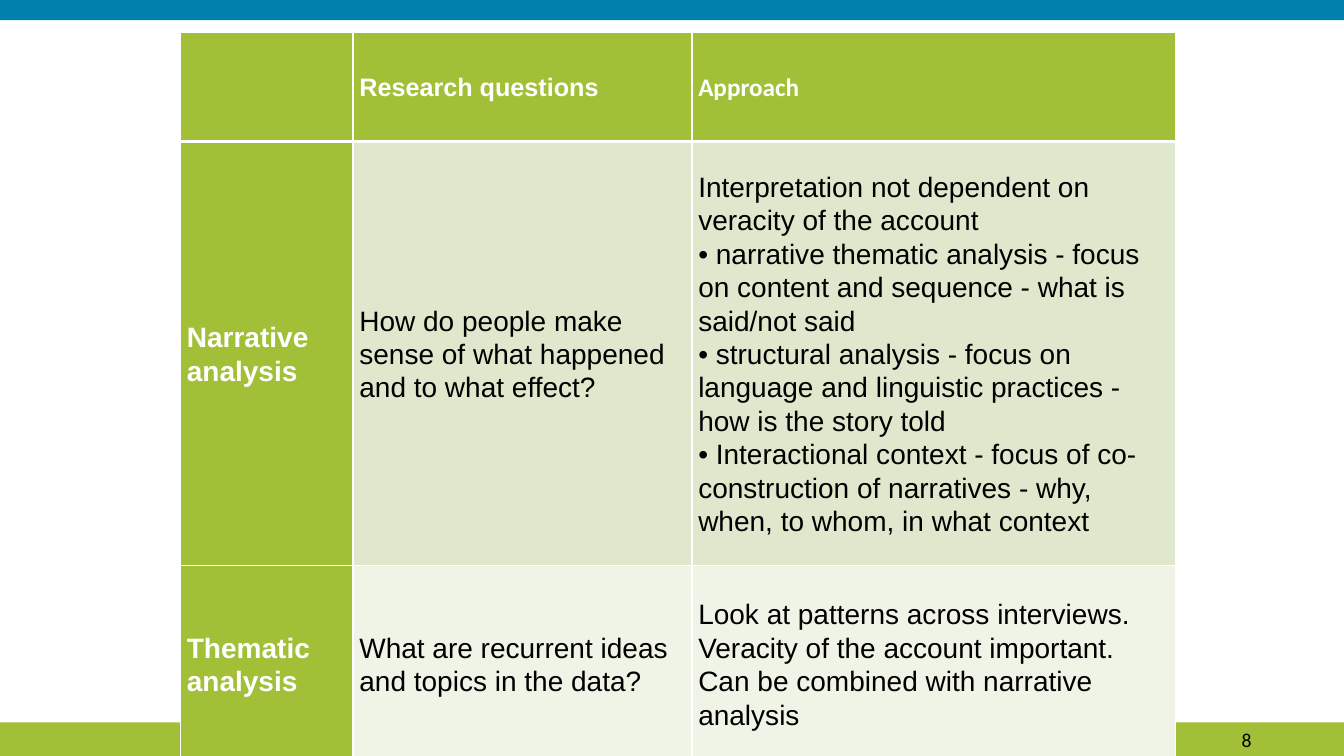
from dataclasses import dataclass

from lxml.etree import SubElement
from pptx import Presentation
from pptx.dml.color import RGBColor
from pptx.enum.shapes import MSO_SHAPE
from pptx.enum.text import MSO_ANCHOR, PP_ALIGN
from pptx.oxml import parse_xml
from pptx.oxml.ns import nsdecls, qn
from pptx.util import Pt


@dataclass(frozen=True)
class Theme:
    green: str = "A2C037"
    blue: str = "0080AA"
    band_dark: str = "DFE8CC"
    band_light: str = "F0F4E7"
    white: str = "FFFFFF"
    black: str = "000000"
    body_font: str = "Arial"
    alt_font: str = "Calibri"
    page_size: int = 14
    head_size: int = 18
    body_size: int = 20


THEME = Theme()
SLIDE_W, SLIDE_H = 960, 540
COL_WIDTHS = [123.2, 242.1, 345.3]
ROW_HEIGHTS = [77.8, 303.2, 140.4]
ROWS = [
    ["", "Research questions", "Approach"],
    [
        "Narrative \vanalysis",
        "How do people make sense of what happened and to what effect?",
        "Interpretation not dependent on veracity of the account\n"
        "• narrative thematic analysis - focus on content and sequence - what is said/not said\n"
        "• structural analysis - focus on language and linguistic practices - how is the story told\n"
        "• Interactional context - focus of co-construction of narratives - why, when, to whom, "
        "in what context",
    ],
    [
        "Thematic \vanalysis",
        "What are recurrent ideas and topics in the data?",
        "Look at patterns across interviews. Veracity of the account important. "
        "Can be combined with narrative analysis",
    ],
]


def set_font(p, name, size, color, bold=False):
    p.font.name = name
    p.font.size = Pt(size)
    p.font.bold = bold
    p.font.color.rgb = RGBColor.from_string(color)


def add_bar(s, x, y, w, h, color):
    sp = s.shapes.add_shape(MSO_SHAPE.RECTANGLE, Pt(x), Pt(y), Pt(w), Pt(h))
    sp.shadow.inherit = False
    sp.fill.solid()
    sp.fill.fore_color.rgb = RGBColor.from_string(color)
    sp.line.fill.background()


def add_page_number(s, x, y, w, h, number):
    tf = s.shapes.add_textbox(Pt(x), Pt(y), Pt(w), Pt(h)).text_frame
    tf.word_wrap = True
    tf.vertical_anchor = MSO_ANCHOR.MIDDLE
    tf.margin_right = 0
    tf.text = number
    p = tf.paragraphs[0]
    p.alignment = PP_ALIGN.RIGHT
    set_font(p, THEME.alt_font, THEME.page_size, THEME.black)


def set_borders(cell, top, bottom):
    tc_pr = cell._tc.get_or_add_tcPr()
    widths = {"lnL": 1, "lnR": 1, "lnT": top, "lnB": bottom}
    for i, (tag, width) in enumerate(widths.items()):
        ln = parse_xml(f'<a:{tag} {nsdecls("a")} w="{Pt(width)}"/>')
        fill = SubElement(ln, qn("a:solidFill"))
        SubElement(fill, qn("a:srgbClr"), val=THEME.white)
        tc_pr.insert(i, ln)


def format_cell(cell, row, col, text):
    is_head = row == 0
    is_label = is_head or col == 0
    band = THEME.band_dark if row % 2 else THEME.band_light
    cell.fill.solid()
    cell.fill.fore_color.rgb = RGBColor.from_string(THEME.green if is_label else band)
    set_borders(cell, 3 if row == 1 else 1, 3 if is_head else 1)
    cell.vertical_anchor = MSO_ANCHOR.MIDDLE
    cell.margin_left = cell.margin_right = Pt(4.5)
    cell.margin_top = cell.margin_bottom = Pt(4.5)
    cell.text_frame.text = text
    font = THEME.alt_font if text == "Approach" else THEME.body_font
    size = THEME.head_size if is_head else THEME.body_size
    color = THEME.white if is_label else THEME.black
    for p in cell.text_frame.paragraphs:
        p.line_spacing = 1.07
        set_font(p, font, size, color, is_label)


def add_analysis_table(s, x, y, w, h):
    frame = s.shapes.add_table(len(ROWS), len(COL_WIDTHS), Pt(x), Pt(y), Pt(w), Pt(h))
    table = frame.table
    table.first_col = True
    table.horz_banding = False
    for column, width in zip(table.columns, COL_WIDTHS):
        column.width = Pt(width)
    for row, height in zip(table.rows, ROW_HEIGHTS):
        row.height = Pt(height)
    for i, texts in enumerate(ROWS):
        for j, text in enumerate(texts):
            format_cell(table.cell(i, j), i, j, text)


def main():
    prs = Presentation()
    prs.slide_width, prs.slide_height = Pt(SLIDE_W), Pt(SLIDE_H)
    s = prs.slides.add_slide(prs.slide_layouts[6])
    add_bar(s, 0, SLIDE_H - 24, SLIDE_W, 24, THEME.green)
    add_bar(s, 0, 0, SLIDE_W, 14.4, THEME.blue)
    add_page_number(s, 678, 517.7, 216, 21, "8")
    add_analysis_table(s, 129, 23.2, sum(COL_WIDTHS), sum(ROW_HEIGHTS))
    prs.save("out.pptx")


if __name__ == "__main__":
    main()
